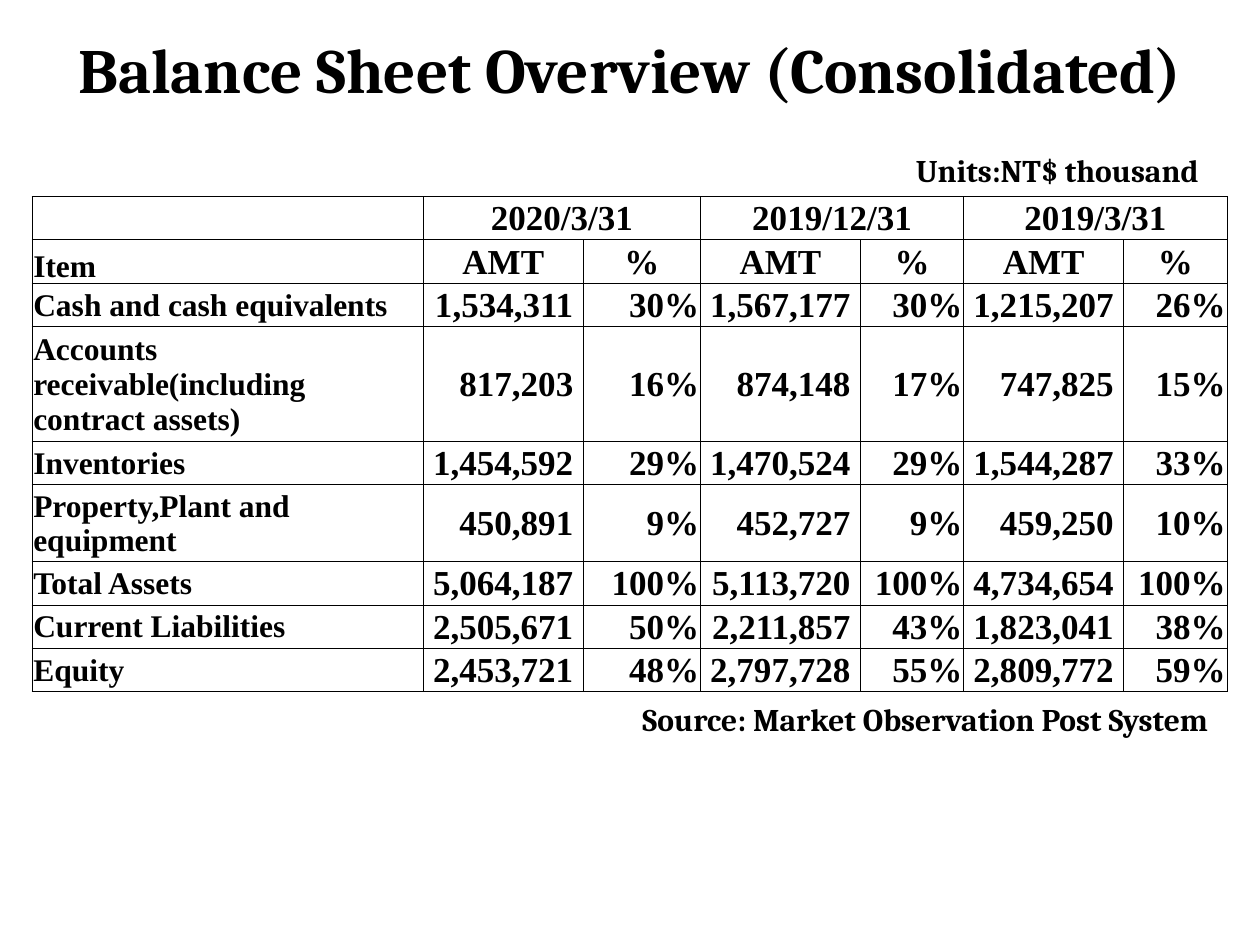
from dataclasses import dataclass

from lxml import etree
from pptx import Presentation
from pptx.dml.color import RGBColor
from pptx.enum.text import MSO_ANCHOR, MSO_AUTO_SIZE, PP_ALIGN
from pptx.oxml.ns import qn
from pptx.util import Pt

LEFT, CENTER, RIGHT = PP_ALIGN.LEFT, PP_ALIGN.CENTER, PP_ALIGN.RIGHT
MIDDLE = MSO_ANCHOR.MIDDLE
FIT_TEXT = MSO_AUTO_SIZE.SHAPE_TO_FIT_TEXT


@dataclass(frozen=True)
class Theme:
    ink: str = "000000"
    heading_font: str = "Cambria"
    table_font: str = "Times New Roman"
    title_size: int = 36
    label_size: int = 18
    figure_size: int = 20
    border_width: float = 0.5


THEME = Theme()

DATES = ["2020/3/31", "2019/12/31", "2019/3/31"]
BALANCES = [
    ("Cash and cash equivalents",
     [("1,534,311", "30%"), ("1,567,177", "30%"), ("1,215,207", "26%")]),
    ("Accounts receivable(including contract assets)",
     [("817,203", "16%"), ("874,148", "17%"), ("747,825", "15%")]),
    ("Inventories",
     [("1,454,592", "29%"), ("1,470,524", "29%"), ("1,544,287", "33%")]),
    ("Property,Plant and equipment",
     [("450,891", "9%"), ("452,727", "9%"), ("459,250", "10%")]),
    ("Total Assets",
     [("5,064,187", "100%"), ("5,113,720", "100%"), ("4,734,654", "100%")]),
    ("Current Liabilities",
     [("2,505,671", "50%"), ("2,211,857", "43%"), ("1,823,041", "38%")]),
    ("Equity",
     [("2,453,721", "48%"), ("2,797,728", "55%"), ("2,809,772", "59%")]),
]
COLUMN_WIDTHS = [223.6, 91.44, 66.96, 91.44, 59.04, 91.44, 59.04]
LINE_HEIGHT = 24.75
TALL_ROWS = {3: 65.7, 5: 44}


def write(frame, text, font_name, size, align):
    frame.text = text
    paragraph = frame.paragraphs[0]
    paragraph.alignment = align
    for run in paragraph.runs:
        run.font.name = font_name
        run.font.size = Pt(size)
        run.font.bold = True
        run.font.color.rgb = RGBColor.from_string(THEME.ink)


def add_heading(slide, text, left, top, width, height, size, align=LEFT):
    box = slide.shapes.add_textbox(Pt(left), Pt(top), Pt(width), Pt(height))
    frame = box.text_frame
    frame.word_wrap = True
    write(frame, text, THEME.heading_font, size, align)
    return frame


def add_borders(cell):
    properties = cell._tc.get_or_add_tcPr()
    for position, side in enumerate(("lnL", "lnR", "lnT", "lnB")):
        line = etree.Element(qn(f"a:{side}"), w=str(Pt(THEME.border_width)))
        fill = etree.SubElement(line, qn("a:solidFill"))
        etree.SubElement(fill, qn("a:srgbClr"), val=THEME.ink)
        properties.insert(position, line)


def fill_cell(cell, text, size, align):
    cell.margin_left = cell.margin_right = cell.margin_top = Pt(0.72)
    cell.margin_bottom = 0
    cell.vertical_anchor = MIDDLE
    write(cell.text_frame, text, THEME.table_font, size, align)


def table_rows():
    """Return the text of every cell, header rows first."""
    date_row = [""]
    for date in DATES:
        date_row += [date, ""]
    rows = [date_row, ["Item　"] + ["AMT", "%"] * len(DATES)]
    for item, periods in BALANCES:
        row = [item]
        for amount, share in periods:
            row += [f"{amount} ", share]
        rows.append(row)
    return rows


def add_balance_table(slide, left, top):
    rows = table_rows()
    heights = [TALL_ROWS.get(index, LINE_HEIGHT) for index in range(len(rows))]
    table = slide.shapes.add_table(
        len(rows), len(COLUMN_WIDTHS), Pt(left), Pt(top),
        Pt(sum(COLUMN_WIDTHS)), Pt(sum(heights))).table
    table.first_row = table.horz_banding = False
    for column, width in zip(table.columns, COLUMN_WIDTHS):
        column.width = Pt(width)
    for row, height in zip(table.rows, heights):
        row.height = Pt(height)

    for row_index, row in enumerate(rows):
        for column_index, text in enumerate(row):
            cell = table.cell(row_index, column_index)
            if column_index == 0:
                size, align = THEME.label_size, LEFT
            else:
                size = THEME.figure_size
                align = CENTER if row_index < 2 else RIGHT
            fill_cell(cell, text, size, align)
            cell.fill.background()
            add_borders(cell)
    for first in range(1, len(COLUMN_WIDTHS), 2):
        table.cell(0, first).merge(table.cell(0, first + 1))


def main():
    presentation = Presentation()
    presentation.slide_width, presentation.slide_height = Pt(720), Pt(540)
    slide = presentation.slides.add_slide(presentation.slide_layouts[6])

    title = add_heading(slide, "Balance Sheet Overview (Consolidated)",
                        14.4, 12.24, 691.2, 54, THEME.title_size, CENTER)
    title.vertical_anchor = MIDDLE
    units = add_heading(slide, "Units:NT$ thousand",
                        516.24, 82.8, 190.8, 28.8, THEME.label_size)
    source = add_heading(slide, "Source: Market Observation Post System",
                         360, 396.72, 370.8, 28.8, THEME.label_size)
    units.auto_size = source.auto_size = FIT_TEXT
    add_balance_table(slide, 18.3, 112.3)
    presentation.save("out.pptx")


if __name__ == "__main__":
    main()
